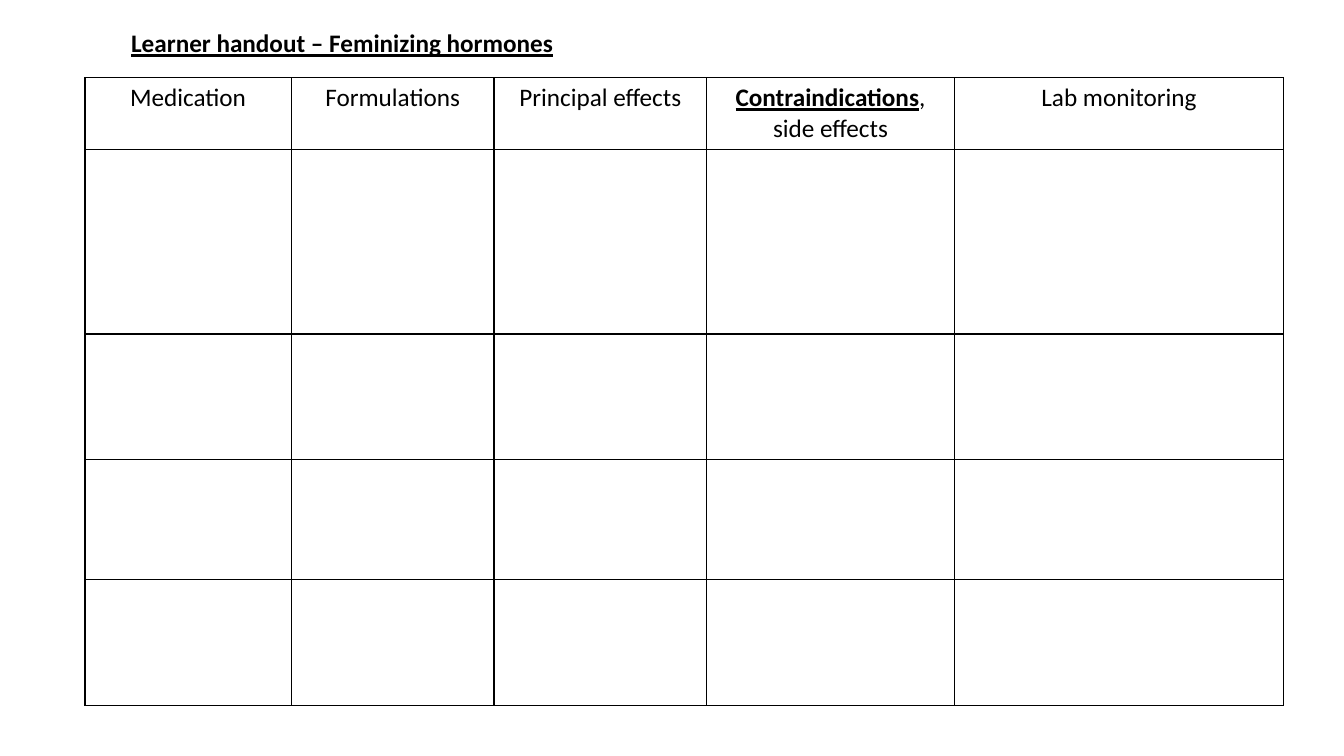
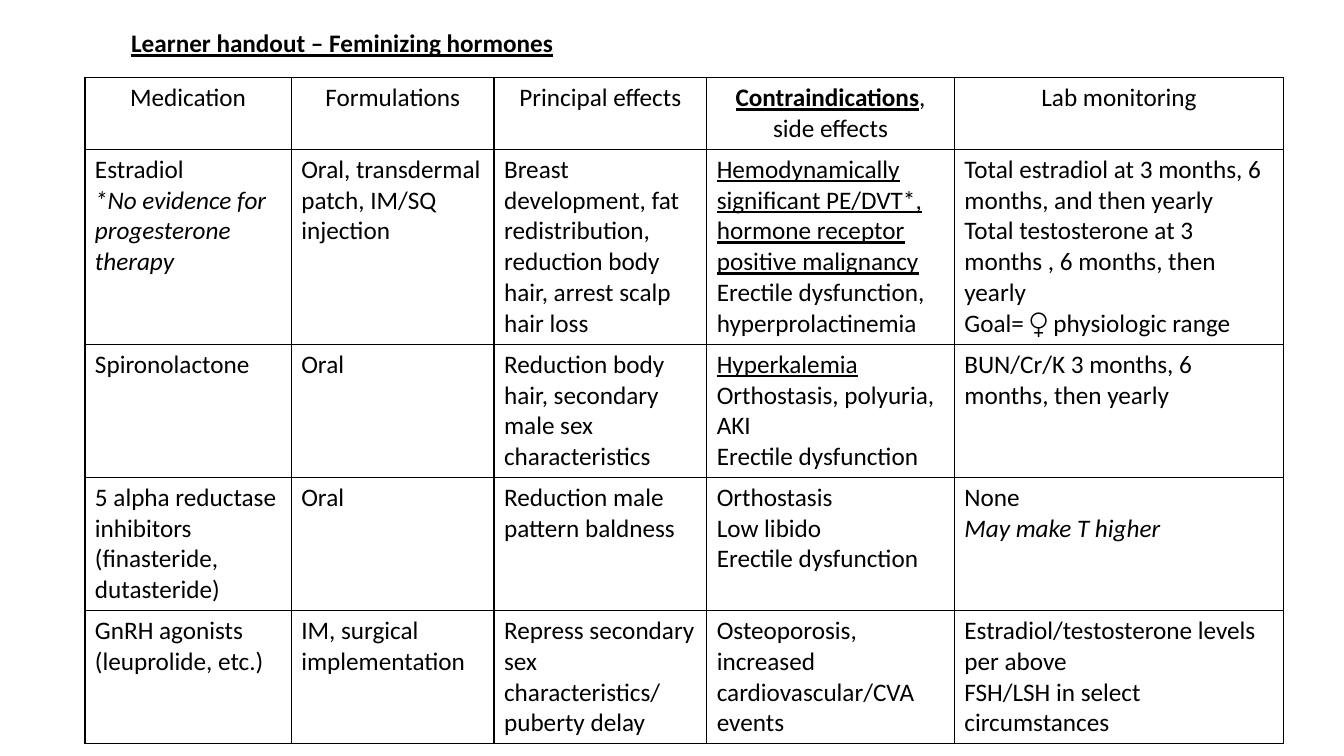
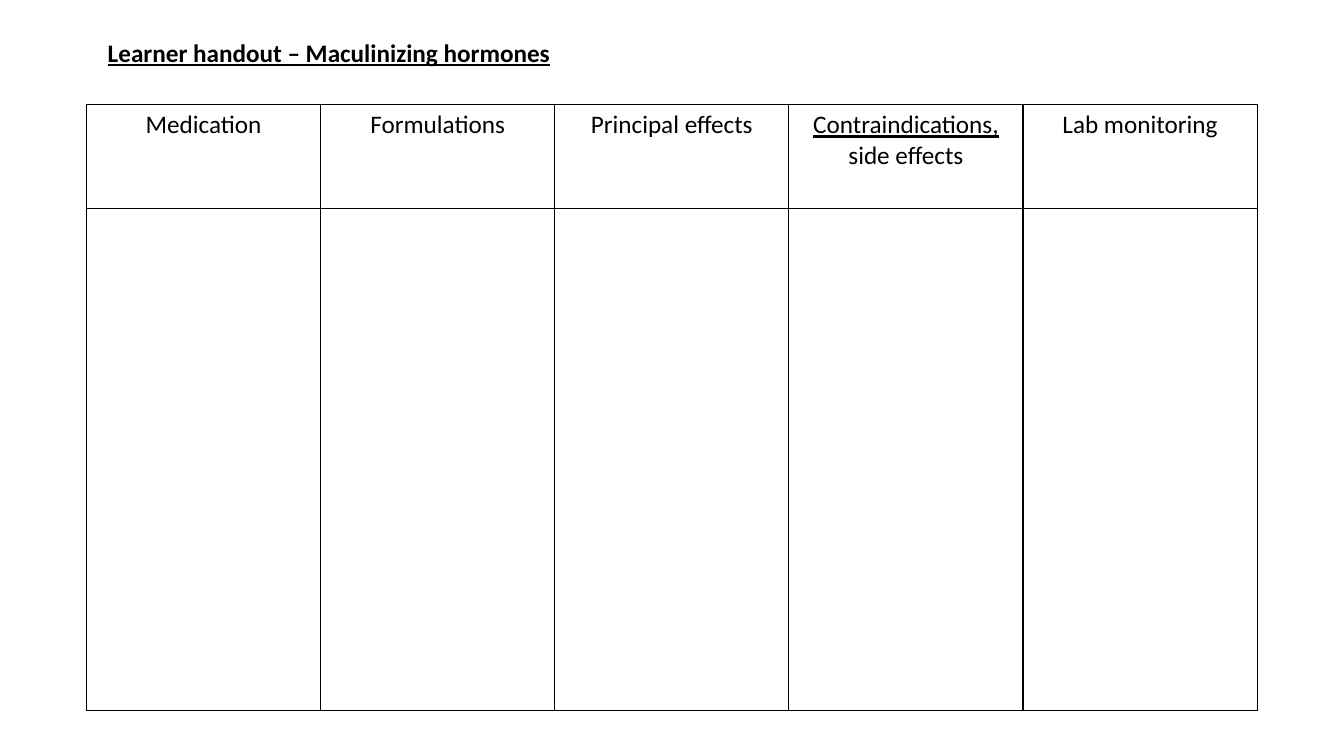
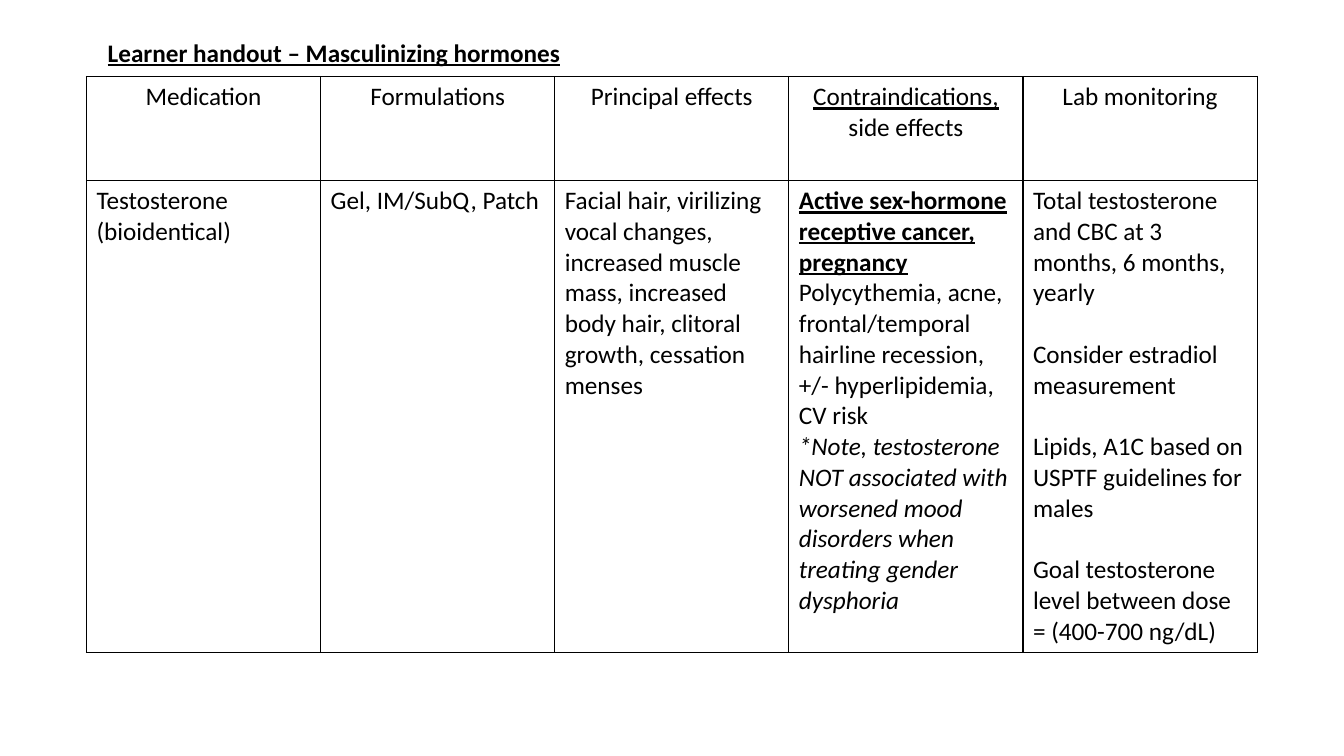
from lxml import etree
from pptx import Presentation
from pptx.dml.color import RGBColor
from pptx.enum.text import MSO_ANCHOR, PP_ALIGN
from pptx.oxml.ns import qn
from pptx.util import Cm, Pt

LEFT, CENTER = PP_ALIGN.LEFT, PP_ALIGN.CENTER
BOTTOM = MSO_ANCHOR.BOTTOM
TITLE_ONLY = 5

COLORS = {"text": "000000", "border": "000000"}
FONT, SIZE = "Calibri", Pt(18)
PARAGRAPH_GAP = Pt(22)
TITLE_HEIGHT = 1.3

# A cell is a list of paragraphs; a paragraph is a list of (text, style) spans.
# A cell or paragraph that is a bare string is plain text.
FEMINIZING_HEAD = [
    "Medication",
    "Formulations",
    "Principal effects",
    [[("Contraindications", "bold underline"), (", side effects", "")]],
    "Lab monitoring",
]
MASCULINIZING_HEAD = [
    "Medication",
    "Formulations",
    "Principal effects",
    [[("Contraindications, ", "underline"), ("side effects", "")]],
    "Lab monitoring",
]
BLANK_ROW = [""] * 5

FEMINIZING_ROWS = [
    [
        ["Estradiol", [("*No evidence for progesterone therapy", "italic")]],
        "Oral, transdermal patch, IM/SQ injection",
        "Breast development, fat redistribution, reduction body hair, arrest scalp hair loss",
        [[("Hemodynamically significant PE/DVT*, hormone receptor positive malignancy", "underline")],
         "Erectile dysfunction, hyperprolactinemia"],
        ["Total estradiol at 3 months, 6 months, and then yearly",
         "Total testosterone at 3 months , 6 months, then yearly",
         "Goal= ♀ physiologic range"],
    ],
    [
        "Spironolactone",
        "Oral",
        "Reduction body hair, secondary male sex characteristics",
        [[("Hyperkalemia", "underline")], "Orthostasis, polyuria, AKI", "Erectile dysfunction"],
        "BUN/Cr/K 3 months, 6 months, then yearly",
    ],
    [
        "5 alpha reductase inhibitors (finasteride, dutasteride)",
        "Oral",
        "Reduction male pattern baldness",
        ["Orthostasis", "Low libido", "Erectile dysfunction"],
        ["None", [("May make T higher", "italic")]],
    ],
    [
        ["GnRH agonists", "(leuprolide, etc.)"],
        "IM, surgical implementation",
        ["Repress secondary sex characteristics/", "puberty delay"],
        "Osteoporosis, increased cardiovascular/CVA events",
        ["Estradiol/testosterone levels per above", "FSH/LSH in select circumstances"],
    ],
]
MASCULINIZING_ROWS = [
    [
        "Testosterone (bioidentical)",
        "Gel, IM/SubQ, Patch",
        "Facial hair, virilizing vocal changes, increased muscle mass, increased body hair, "
        "clitoral growth, cessation menses",
        [[("Active sex-hormone receptive cancer, pregnancy", "bold underline")],
         "Polycythemia, acne, frontal/temporal hairline recession, +/- hyperlipidemia, CV risk",
         [("*Note, testosterone NOT associated with worsened mood disorders "
           "when treating gender dysphoria", "italic")]],
        ["Total testosterone and CBC at 3 months, 6 months, yearly",
         [("Consider estradiol measurement", "spaced")],
         [("Lipids, A1C based on USPTF guidelines for males", "spaced")],
         [("Goal testosterone level between dose = (400-700 ng/dL)", "spaced")]],
    ],
]

# Lengths in centimetres
FEMINIZING = {
    "head": FEMINIZING_HEAD, "title_at": (3.05, 0.3), "title_width": 30.2,
    "left": 2.14, "columns": [5.2, 5.11, 5.36, 6.24, 8.3],
}
MASCULINIZING = {
    "head": MASCULINIZING_HEAD, "title_at": (2.46, 0.54), "title_width": 29.2,
    "left": 2.18, "columns": [5.9] * 5,
}
HANDOUTS = [
    {**FEMINIZING, "title": "Learner handout – Feminizing hormones", "top": 1.96,
     "heights": [1.78, 4.65, 3.17, 3.02, 3.17], "rows": [BLANK_ROW] * 4},
    {**FEMINIZING, "title": "Learner handout – Feminizing hormones", "top": 1.96,
     "heights": [1.78, 4.91, 3.35, 3.35, 3.35], "rows": FEMINIZING_ROWS},
    {**MASCULINIZING, "title": "Learner handout – Maculinizing hormones", "top": 2.64,
     "heights": [2.62, 12.65], "rows": [BLANK_ROW]},
    {**MASCULINIZING, "title": "Learner handout – Masculinizing hormones", "top": 1.93,
     "heights": [2.62, 11.87], "rows": MASCULINIZING_ROWS},
]


def format_font(font, style=""):
    font.name, font.size = FONT, SIZE
    font.color.rgb = RGBColor.from_string(COLORS["text"])
    font.bold = "bold" in style
    font.italic = "italic" in style
    font.underline = "underline" in style


def add_title(page, handout):
    title = page.shapes.title
    left, top = handout["title_at"]
    title.left, title.top = Cm(left), Cm(top)
    title.width, title.height = Cm(handout["title_width"]), Cm(TITLE_HEIGHT)
    frame = title.text_frame
    frame.text = handout["title"]
    frame.vertical_anchor = BOTTOM
    paragraph = frame.paragraphs[0]
    paragraph.alignment = LEFT
    paragraph.line_spacing = 0.9
    format_font(paragraph.runs[0].font, "bold underline")


def set_borders(cell):
    """Draw a thin line on all four sides; the lines must come before the fill."""
    properties = cell._tc.get_or_add_tcPr()
    for position, side in enumerate(("lnL", "lnR", "lnT", "lnB")):
        line = etree.Element(qn(f"a:{side}"), w=str(Pt(1)))
        fill = etree.SubElement(line, qn("a:solidFill"))
        etree.SubElement(fill, qn("a:srgbClr"), val=COLORS["border"])
        properties.insert(position, line)


def fill_cell(cell, content, alignment):
    cell.fill.background()
    set_borders(cell)
    paragraphs = [content] if isinstance(content, str) else content
    frame = cell.text_frame
    for index, spans in enumerate(paragraphs):
        paragraph = frame.add_paragraph() if index else frame.paragraphs[0]
        paragraph.alignment = alignment
        format_font(paragraph.font)
        if isinstance(spans, str):
            spans = [(spans, "")] if spans else []
        for text, style in spans:
            span = paragraph.add_run()
            span.text = text
            format_font(span.font, style)
            if "spaced" in style:
                paragraph.space_before = PARAGRAPH_GAP


def add_medication_table(page, handout):
    rows = [handout["head"]] + handout["rows"]
    columns, heights = handout["columns"], handout["heights"]
    table = page.shapes.add_table(
        len(rows), len(columns), Cm(handout["left"]), Cm(handout["top"]),
        Cm(sum(columns)), Cm(sum(heights))).table
    table.first_row = table.horz_banding = False
    for column, width in zip(table.columns, columns):
        column.width = Cm(width)
    for row, height in zip(table.rows, heights):
        row.height = Cm(height)
    for row_index, row in enumerate(rows):
        for column_index, content in enumerate(row):
            fill_cell(table.cell(row_index, column_index), content,
                      LEFT if row_index else CENTER)


def main():
    deck = Presentation()
    deck.slide_width, deck.slide_height = Cm(33.87), Cm(19.05)
    for handout in HANDOUTS:
        page = deck.slides.add_slide(deck.slide_layouts[TITLE_ONLY])
        add_title(page, handout)
        add_medication_table(page, handout)
    deck.save("out.pptx")


if __name__ == "__main__":
    main()
